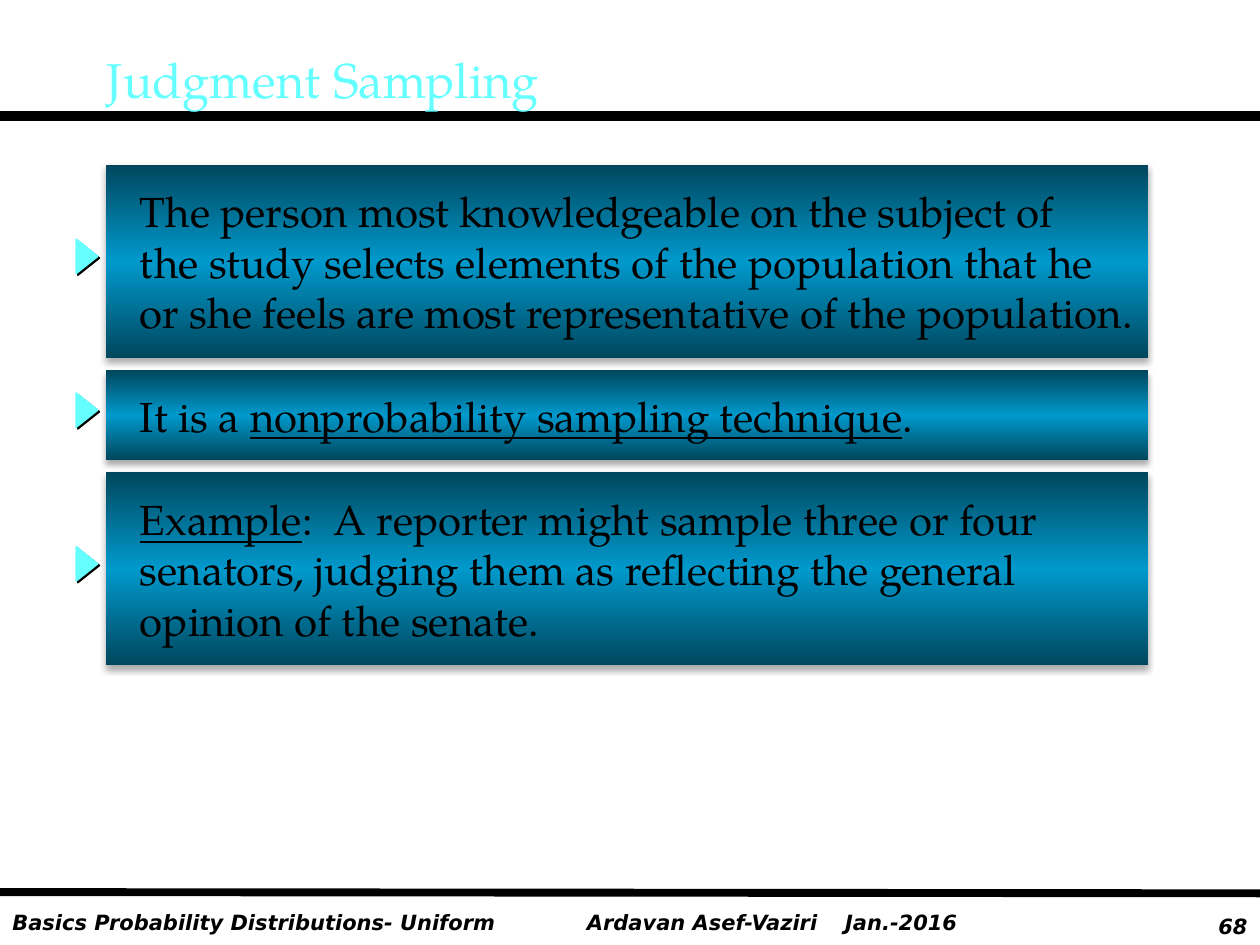
from dataclasses import dataclass

from lxml import etree
from pptx import Presentation
from pptx.dml.color import RGBColor
from pptx.enum.shapes import MSO_CONNECTOR, MSO_SHAPE
from pptx.enum.text import MSO_ANCHOR, PP_ALIGN
from pptx.oxml.ns import qn
from pptx.util import Inches, Pt

STRAIGHT = MSO_CONNECTOR.STRAIGHT
RECTANGLE, TRIANGLE = MSO_SHAPE.RECTANGLE, MSO_SHAPE.ISOSCELES_TRIANGLE
LEFT, RIGHT = PP_ALIGN.LEFT, PP_ALIGN.RIGHT
TOP, MIDDLE = MSO_ANCHOR.TOP, MSO_ANCHOR.MIDDLE


@dataclass(frozen=True)
class Theme:
    ink: str = "000000"
    accent: str = "66FFFF"
    panel_edge: str = "00475E"
    panel_middle: str = "0099CC"
    serif: str = "TeX Gyre Pagella"
    sans: str = "DejaVu Sans"
    title_size: int = 28
    body_size: int = 24
    footer_size: int = 12


THEME = Theme()

# Each statement is a list of lines; each line is a list of (text, underlined).
STATEMENTS = [
    [[("The person most knowledgeable on the subject of", False)],
     [("the study selects elements of the population that he", False)],
     [("or she feels are most representative of the population.", False)]],
    [[("It is a ", False), ("nonprobability sampling technique", True), (".", False)]],
    [[("Example", True), (":  A reporter might sample three or four", False)],
     [("senators, judging them as reflecting the general", False)],
     [("opinion of the senate.", False)]],
]


def add_span(para, text, font, size, color, heavy=False, underlined=False):
    span = para.add_run()
    span.text = text
    span.font.name = font
    span.font.size = Pt(size)
    span.font.color.rgb = RGBColor.from_string(color)
    span.font.bold = span.font.italic = heavy
    span.font.underline = underlined


def set_shadow(shape, blur, distance, angle, opacity):
    """Blur and distance in points, angle in degrees, opacity in percent."""
    shape.shadow.inherit = False
    effects = shape._element.spPr.find(qn("a:effectLst"))
    outer = etree.SubElement(
        effects, qn("a:outerShdw"), blurRad=str(Pt(blur)), dist=str(Pt(distance)),
        dir=str(angle * 60000), algn="ctr", rotWithShape="0")
    color = etree.SubElement(outer, qn("a:srgbClr"), val=THEME.ink)
    etree.SubElement(color, qn("a:alpha"), val=str(opacity * 1000))


def set_panel_gradient(shape):
    shape.fill.gradient()
    shape.fill.gradient_angle = 270
    stops = shape._element.spPr.find(qn("a:gradFill")).find(qn("a:gsLst"))
    for stop in list(stops):
        stops.remove(stop)
    colors = (THEME.panel_edge, THEME.panel_middle, THEME.panel_edge)
    for index, color in enumerate(colors):
        stop = etree.SubElement(stops, qn("a:gs"), pos=str(index * 50000))
        etree.SubElement(stop, qn("a:srgbClr"), val=color)


def add_rule(page, start_y, end_y, weight):
    rule = page.shapes.add_connector(
        STRAIGHT, 0, Inches(start_y), Inches(10), Inches(end_y))
    rule.line.color.rgb = RGBColor.from_string(THEME.ink)
    rule.line.width = Pt(weight)
    etree.SubElement(rule._element.spPr, qn("a:effectLst"))


def add_label(page, box, text, font, size, color, heavy=False, align=LEFT, anchor=TOP):
    frame = page.shapes.add_textbox(*map(Inches, box)).text_frame
    frame.word_wrap = True
    frame.vertical_anchor = anchor
    para = frame.paragraphs[0]
    para.alignment = align
    add_span(para, text, font, size, color, heavy)


def add_header(page, box):
    add_rule(page, 0.92, 0.92, 6)
    add_label(page, box, "Judgment Sampling", THEME.serif, THEME.title_size,
              THEME.accent, anchor=MIDDLE)


def add_footer(page, top):
    add_rule(page, 7.08, 7.09, 4.5)
    for left, offset, width, text, align in (
        (0, 0, 4.5, "Basics Probability Distributions- Uniform", LEFT),
        (4.56, 0, 2.05, "Ardavan Asef-Vaziri", LEFT),
        (6.61, 0, 1.3, "Jan.-2016", LEFT),
        (9.25, 0.03, 0.75, "68", RIGHT),
    ):
        add_label(page, (left, top + offset, width, 0.3), text, THEME.sans,
                  THEME.footer_size, THEME.ink, True, align)


def add_marker(page, center_x, center_y):
    """Triangle pointing right at the panel beside it."""
    width, height = 0.27, 0.17
    marker = page.shapes.add_shape(
        TRIANGLE, Inches(center_x - width / 2), Inches(center_y - height / 2),
        Inches(width), Inches(height))
    marker.rotation = 90
    accent = RGBColor.from_string(THEME.accent)
    marker.fill.solid()
    marker.fill.fore_color.rgb = accent
    marker.line.color.rgb = accent
    marker.line.width = Pt(1)
    set_shadow(marker, 0, 1.4, 45, 100)


def add_panel(page, box, lines):
    panel = page.shapes.add_shape(RECTANGLE, *map(Inches, box))
    set_panel_gradient(panel)
    panel.line.fill.background()
    set_shadow(panel, 3.5, 2.2, 90, 32)
    frame = panel.text_frame
    frame.word_wrap = True
    frame.vertical_anchor = MIDDLE
    frame.margin_left, frame.margin_right = Inches(0.27), 0
    for index, line in enumerate(lines):
        para = frame.add_paragraph() if index else frame.paragraphs[0]
        para.alignment = LEFT
        for text, underlined in line:
            add_span(para, text, THEME.serif, THEME.body_size, THEME.ink,
                     underlined=underlined)


def add_statements(page, left, top, width):
    gap = 0.1
    for lines in STATEMENTS:
        height = 0.3 + 0.41 * len(lines)
        add_panel(page, (left, top, width, height), lines)
        add_marker(page, left - 0.15, top + height / 2 - 0.04)
        top += height + gap


def main():
    deck = Presentation()
    deck.slide_width, deck.slide_height = Inches(10), Inches(7.5)
    page = deck.slides.add_slide(deck.slide_layouts[6])
    add_footer(page, 7.17)
    add_header(page, (0.75, 0.27, 8.5, 0.71))
    add_statements(page, 0.84, 1.31, 8.27)
    deck.save("out.pptx")


if __name__ == "__main__":
    main()
